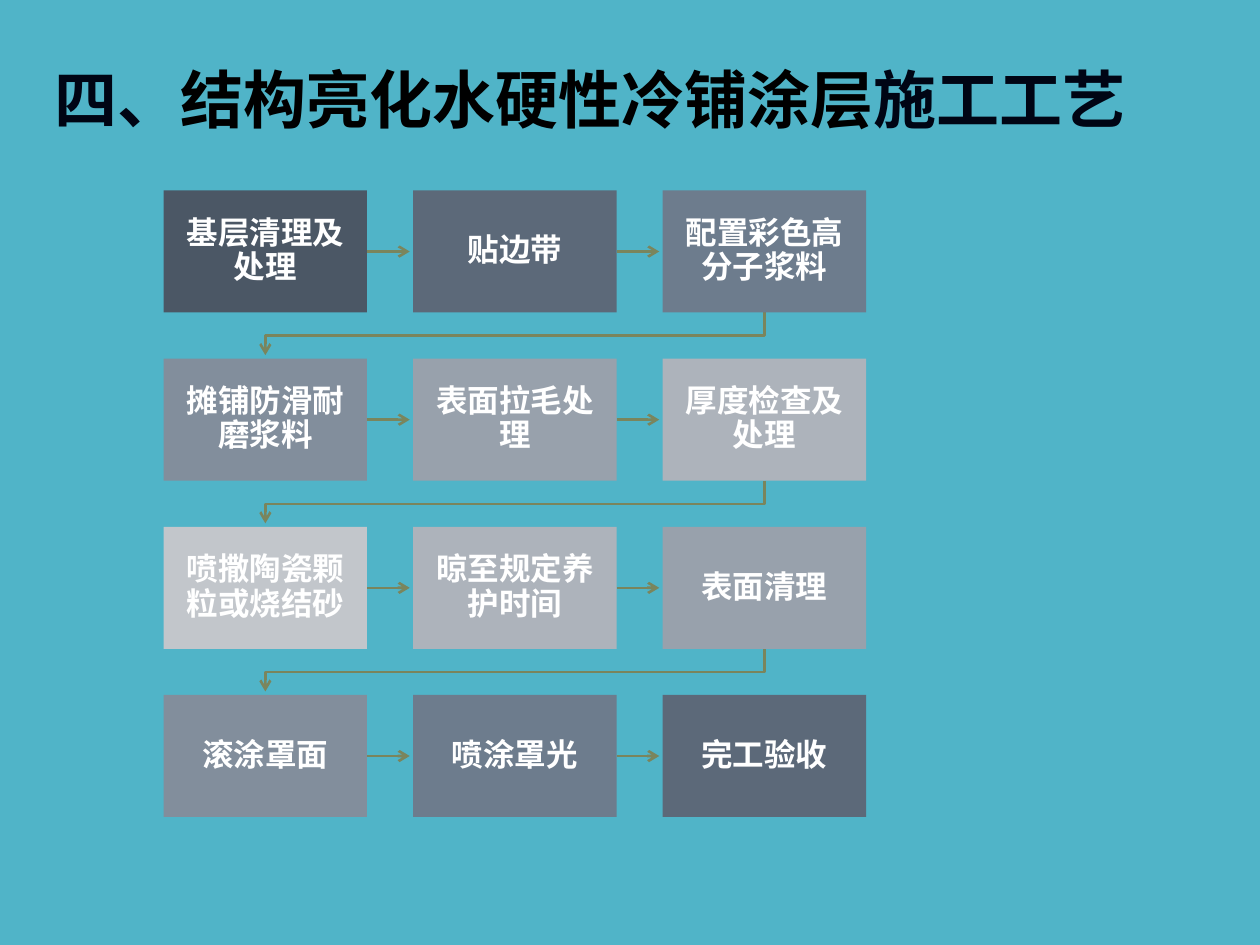
"""Build the construction process slide: a title above a four-row flow of steps."""
from dataclasses import dataclass

from pptx import Presentation
from pptx.dml.color import RGBColor
from pptx.enum.shapes import MSO_CONNECTOR, MSO_SHAPE
from pptx.enum.text import MSO_ANCHOR, MSO_AUTO_SIZE, PP_ALIGN
from pptx.oxml.xmlchemy import OxmlElement
from pptx.util import Cm, Pt

STRAIGHT = MSO_CONNECTOR.STRAIGHT
RECTANGLE = MSO_SHAPE.RECTANGLE
MIDDLE = MSO_ANCHOR.MIDDLE
CENTER = PP_ALIGN.CENTER
NO_FIT = MSO_AUTO_SIZE.NONE

FONT = "Noto Sans CJK SC"
COLORS = {
    "background": "50B4C8", "arrow": "7A855D", "label": "FFFFFF",
    "navy": "000514", "black": "000000",
    "shade1": "4B5765", "shade2": "5C6979", "shade3": "6D7C8D", "shade4": "828E9C",
    "shade5": "98A1AC", "shade6": "ADB3BB", "shade7": "C2C6CB",
}
COLUMNS = 3
LEFT, TOP = 3.3, 3.84
STEP_WIDTH, STEP_HEIGHT = 4.1, 2.46
COLUMN_PITCH, ROW_PITCH = 5.03, 3.39
ARROW_LENGTH, BEND_DROP = 0.86, 0.47


@dataclass(frozen=True)
class Step:
    """One process step with its shade."""
    label: str
    shade: str


STEPS = [
    Step("基层清理及处理", "shade1"),
    Step("贴边带", "shade2"),
    Step("配置彩色高分子浆料", "shade3"),
    Step("摊铺防滑耐磨浆料", "shade4"),
    Step("表面拉毛处理", "shade5"),
    Step("厚度检查及处理", "shade6"),
    Step("喷撒陶瓷颗粒或烧结砂", "shade7"),
    Step("晾至规定养护时间", "shade6"),
    Step("表面清理", "shade5"),
    Step("滚涂罩面", "shade4"),
    Step("喷涂罩光", "shade3"),
    Step("完工验收", "shade2"),
]
TITLE_PARTS = [("四、", "navy"), ("结构亮化水硬性冷铺涂层", "black"), ("施工工艺", "navy")]


def color(key: str) -> RGBColor:
    """Return the named colour."""
    return RGBColor.from_string(COLORS[key])


def apply(target, values: dict) -> None:
    """Set each attribute of the target from the values."""
    for attribute, value in values.items():
        setattr(target, attribute, value)


def add_run(paragraph, words: str, size: int, color_key: str) -> None:
    """Add a bold run in the slide's font."""
    run = paragraph.add_run()
    run.text = words
    apply(run.font, {"name": FONT, "size": Pt(size), "bold": True})
    run.font.color.rgb = color(color_key)
    east_asian = OxmlElement("a:ea")
    east_asian.set("typeface", FONT)
    run.font._element.append(east_asian)


def style_arrow(arrow) -> None:
    """Give a line its colour, width and open arrowhead, without shadow."""
    arrow.line.color.rgb = color("arrow")
    arrow.line.width = Pt(1.5)
    head = OxmlElement("a:tailEnd")
    head.set("type", "arrow")
    arrow.line._get_or_add_ln().append(head)
    arrow._element.spPr.append(OxmlElement("a:effectLst"))


def add_step(slide, step: Step, left: float, top: float) -> None:
    """Draw one labelled step."""
    box = slide.shapes.add_shape(RECTANGLE, Cm(left), Cm(top), Cm(STEP_WIDTH), Cm(STEP_HEIGHT))
    box.shadow.inherit = False
    box.fill.solid()
    box.fill.fore_color.rgb = color(step.shade)
    box.line.fill.background()
    margins = dict.fromkeys(
        ("margin_left", "margin_right", "margin_top", "margin_bottom"), Cm(0.36))
    apply(box.text_frame, {"word_wrap": True, "vertical_anchor": MIDDLE, **margins})
    paragraph = box.text_frame.paragraphs[0]
    apply(paragraph, {"alignment": CENTER, "line_spacing": 0.9})
    add_run(paragraph, step.label, 18, "label")


def add_next_arrow(slide, left: float, top: float) -> None:
    """Draw the arrow from a step to its right-hand neighbour."""
    start, middle = left + STEP_WIDTH, top + STEP_HEIGHT / 2
    style_arrow(slide.shapes.add_connector(
        STRAIGHT, Cm(start), Cm(middle), Cm(start + ARROW_LENGTH), Cm(middle)))


def add_return_arrow(slide, left: float, top: float) -> None:
    """Draw the bent arrow from the end of a row to the start of the next."""
    start = left + STEP_WIDTH / 2
    end = LEFT + STEP_WIDTH / 2
    bottom = top + STEP_HEIGHT
    bend = bottom + BEND_DROP
    corners = [(start, bend), (end, bend), (end, bottom + ARROW_LENGTH)]
    route = slide.shapes.build_freeform(Cm(start), Cm(bottom))
    route.add_line_segments([(Cm(x), Cm(y)) for x, y in corners], close=False)
    arrow = route.convert_to_shape()
    arrow.fill.background()
    style_arrow(arrow)


def add_title(slide) -> None:
    """Place and fill the title."""
    title = slide.shapes.title
    apply(title, {"left": Cm(0.56), "top": Cm(1.09), "width": Cm(22.68), "height": Cm(1.8)})
    title.fill.solid()
    title.fill.fore_color.rgb = color("background")
    apply(title.text_frame,
          {"word_wrap": True, "auto_size": NO_FIT, "vertical_anchor": MIDDLE})
    paragraph = title.text_frame.paragraphs[0]
    apply(paragraph, {"alignment": CENTER, "space_before": Pt(0)})
    for words, color_key in TITLE_PARTS:
        add_run(paragraph, words, 36, color_key)


def main() -> None:
    """Create and save the slide."""
    deck = Presentation()
    apply(deck, {"slide_width": Cm(25.4), "slide_height": Cm(19.05)})
    slide = deck.slides.add_slide(deck.slide_layouts[5])
    slide.background.fill.solid()
    slide.background.fill.fore_color.rgb = color("background")
    add_title(slide)
    for index, step in enumerate(STEPS):
        row, column = divmod(index, COLUMNS)
        left, top = LEFT + column * COLUMN_PITCH, TOP + row * ROW_PITCH
        if column < COLUMNS - 1:
            add_next_arrow(slide, left, top)
        elif index < len(STEPS) - 1:
            add_return_arrow(slide, left, top)
        add_step(slide, step, left, top)
    deck.save("out.pptx")


if __name__ == "__main__":
    main()
